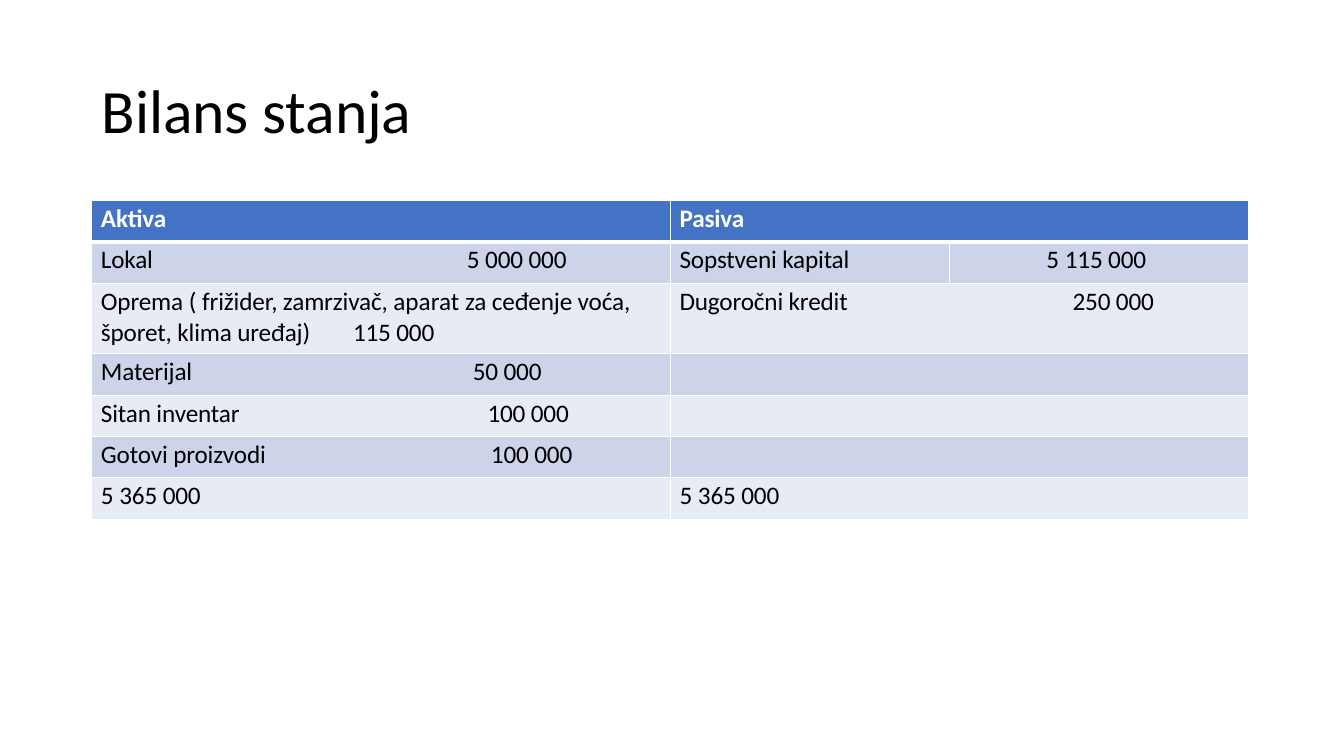
from dataclasses import dataclass
from typing import Optional

from lxml.etree import SubElement
from pptx import Presentation
from pptx.dml.color import RGBColor
from pptx.enum.text import MSO_ANCHOR, MSO_AUTO_SIZE, PP_ALIGN
from pptx.oxml.ns import qn
from pptx.util import Inches, Pt


@dataclass(frozen=True)
class Theme:
    font: str = "Calibri"
    title_size: float = 44
    body_size: float = 18
    ink: str = "000000"
    paper: str = "FFFFFF"
    header: str = "4472C4"
    bands: tuple[str, str] = ("CDD4EA", "E7EBF4")
    thin: float = 1
    thick: float = 3
    tracking: int = -10


@dataclass(frozen=True)
class Span:
    text: str
    tracked: bool = True


@dataclass(frozen=True)
class Entry:
    spans: tuple[Span, ...] = ()
    indent: float = 0.68
    align: PP_ALIGN = PP_ALIGN.LEFT
    tab: Optional[float] = None
    line_spacing: Optional[float] = None


@dataclass(frozen=True)
class Side:
    label: Entry
    amount: Optional[Entry] = None
    divided: bool = False


THEME = Theme()
WIDTH, HEIGHT = Inches(13.33), Inches(7.5)
COLUMNS = (20.55, 22.5, 20.78, 22.28)
ROW, TALL_ROW = 5.47, 9.33


def across(percent: float) -> int:
    return round(WIDTH * percent / 100)


def down(percent: float) -> int:
    return round(HEIGHT * percent / 100)


def plain(text: str, indent: float = 0.68, align: PP_ALIGN = PP_ALIGN.LEFT) -> Entry:
    return Entry((Span(text),), indent, align)


def millions(rest: str, indent: float = 0.68) -> Entry:
    return Entry((Span("5 ", False), Span(rest)), indent)


EQUIPMENT = Entry(
    (
        Span("Oprema "),
        Span("( ", False),
        Span("frižider, zamrzivač, "),
        Span("aparat ", False),
        Span("za ceđenje voća, šporet, klima uređaj)\t115 000"),
    ),
    tab=28.8,
    line_spacing=1.01,
)
EMPTY = Side(Entry())
BALANCE = (
    (Side(plain("Aktiva")), Side(plain("Pasiva"))),
    (
        Side(plain("Lokal"), millions("000 000", 7.35)),
        Side(plain("Sopstveni kapital"), millions("115 000", 7.2), divided=True),
    ),
    (Side(EQUIPMENT), Side(plain("Dugoročni kredit"), plain("250 000", 9.15))),
    (Side(plain("Materijal"), plain("50 000", 7.8)), EMPTY),
    (Side(plain("Sitan inventar"), plain("100 000", 1.35, PP_ALIGN.CENTER)), EMPTY),
    (Side(plain("Gotovi proizvodi"), plain("100 000", 9.15)), EMPTY),
    (Side(millions("365 000")), Side(millions("365 000"))),
)


def write(para, entry: Entry, size: float, color: str, bold: bool, before: float) -> None:
    para.alignment = entry.align
    para.space_before = Pt(before)
    if entry.line_spacing:
        para.line_spacing = entry.line_spacing
    properties = para._p.get_or_add_pPr()
    properties.set("marL", str(across(entry.indent)))
    properties.set("indent", "0")
    if entry.tab:
        stops = SubElement(properties, qn("a:tabLst"))
        SubElement(stops, qn("a:tab"), pos=str(across(entry.tab)), algn="l")
    for span in entry.spans:
        run = para.add_run()
        run.text = span.text
        run.font.name = THEME.font
        run.font.size = Pt(size)
        run.font.bold = bold
        run.font.color.rgb = RGBColor.from_string(color)
        run._r.get_or_add_rPr().set("spc", str(THEME.tracking if span.tracked else 0))


def outline(cell, left: float, right: float, top: float, bottom: float) -> None:
    properties = cell._tc.get_or_add_tcPr()
    for tag, points in (("lnL", left), ("lnR", right), ("lnT", top), ("lnB", bottom)):
        line = SubElement(properties, qn(f"a:{tag}"), w=str(int(Pt(points))))
        if points:
            fill = SubElement(line, qn("a:solidFill"))
            SubElement(fill, qn("a:srgbClr"), val=THEME.paper)
        else:
            SubElement(line, qn("a:noFill"))


def format_cell(cell, entry: Entry, row: int, left: float, right: float) -> None:
    header = row == 0
    cell.margin_left = cell.margin_right = cell.margin_bottom = 0
    cell.margin_top = Inches(0.03)
    top = THEME.thick if row == 1 else THEME.thin
    bottom = THEME.thick if header else THEME.thin
    outline(cell, left, right, top, bottom)
    cell.fill.solid()
    color = THEME.header if header else THEME.bands[(row - 1) % 2]
    cell.fill.fore_color.rgb = RGBColor.from_string(color)
    ink = THEME.paper if header else THEME.ink
    write(cell.text_frame.paragraphs[0], entry, THEME.body_size, ink, header, 2.2)


def add_title(page, text: str) -> None:
    title = page.shapes.title
    title.left, title.top = across(7.5), down(9.33)
    title.width, title.height = across(23.41), down(10.13)
    frame = title.text_frame
    frame.margin_left = frame.margin_right = frame.margin_bottom = 0
    frame.margin_top = Inches(0.01)
    frame.vertical_anchor = MSO_ANCHOR.TOP
    frame.auto_size = MSO_AUTO_SIZE.NONE
    entry = plain(text, 0.08)
    write(frame.paragraphs[0], entry, THEME.title_size, THEME.ink, False, 1)


def add_balance(page) -> None:
    heights = [TALL_ROW if sides[0].label is EQUIPMENT else ROW for sides in BALANCE]
    box = page.shapes.add_table(
        len(BALANCE), len(COLUMNS), across(6.83), down(26.53),
        across(sum(COLUMNS)), down(sum(heights)),
    )
    table = box.table
    for column, width in zip(table.columns, COLUMNS):
        column.width = across(width)
    for line, height in zip(table.rows, heights):
        line.height = down(height)
    for row, sides in enumerate(BALANCE):
        for number, side in enumerate(sides):
            first, second = (table.cell(row, number * 2 + step) for step in (0, 1))
            inner = THEME.thin if side.divided else 0
            if side.amount is None:
                first.merge(second)
                inner = THEME.thin
            format_cell(first, side.label, row, THEME.thin, inner)
            format_cell(second, side.amount or Entry(), row, inner, THEME.thin)


def main() -> None:
    deck = Presentation()
    deck.slide_width, deck.slide_height = WIDTH, HEIGHT
    page = deck.slides.add_slide(deck.slide_layouts[5])
    add_title(page, "Bilans stanja")
    add_balance(page)
    deck.save("out.pptx")


if __name__ == "__main__":
    main()
